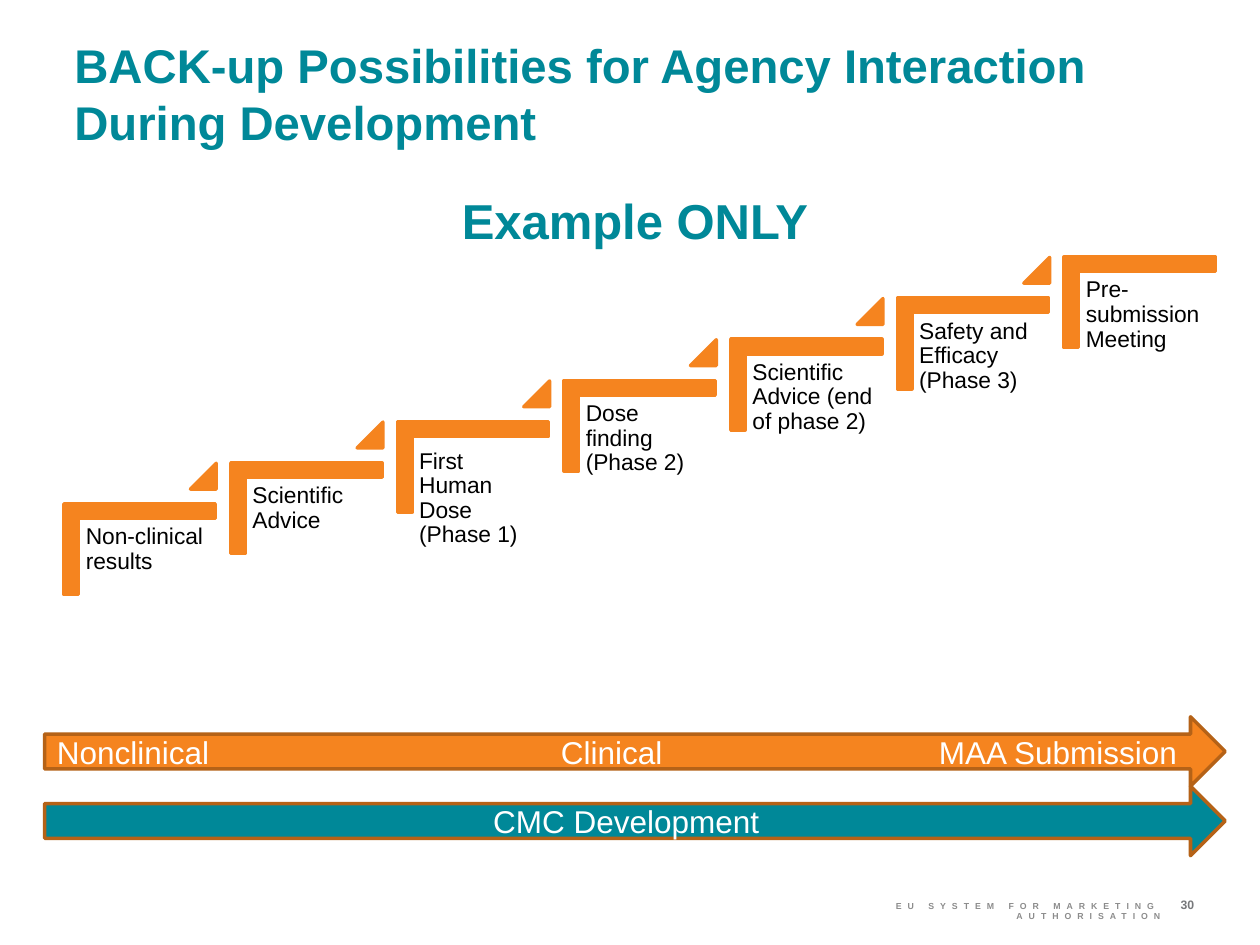
from lxml.etree import SubElement
from pptx import Presentation
from pptx.dml.color import RGBColor
from pptx.enum.shapes import MSO_SHAPE
from pptx.enum.text import MSO_ANCHOR, MSO_AUTO_SIZE, PP_ALIGN
from pptx.oxml.ns import qn
from pptx.util import Cm, Pt

ORANGE = RGBColor(0xF5, 0x84, 0x1F)
BROWN = RGBColor(0xB5, 0x62, 0x17)
TEAL = RGBColor(0x00, 0x88, 0x98)
BLACK = RGBColor(0x00, 0x00, 0x00)
WHITE = RGBColor(0xFF, 0xFF, 0xFF)
LIGHT_GREY = RGBColor(0x8C, 0x8C, 0x8C)
GREY = RGBColor(0x77, 0x78, 0x7B)

TITLE = "BACK-up Possibilities for Agency Interaction During Development"
SUBTITLE = "Example ONLY"
FOOTER = "EU SYSTEM FOR MARKETING AUTHORISATION"
PAGE_NUMBER = "30"
# Label of each step, with its shift down from the regular place in cm
STEPS = [
    ("Non-clinical results", 0),
    ("Scientific Advice", 0),
    ("First Human Dose (Phase 1)", 0.13),
    ("Dose finding (Phase 2)", 0),
    ("Scientific Advice (end of phase 2)", 0),
    ("Safety and Efficacy (Phase 3)", 0),
    ("Pre-submission Meeting", 0),
]
PHASES = ["Nonclinical", "Clinical", "MAA Submission"]
PHASE_TABS = [10.16, 17.78]
TRACKS = [
    ("\t".join(PHASES), ORANGE, PP_ALIGN.LEFT),
    ("CMC Development", TEAL, PP_ALIGN.CENTER),
]

STEP_RUN, STEP_RISE = 3.36, 0.83
TRACK_TOP, TRACK_HEIGHT = 14.45, 1.4


def write(shape, text, size, color, bold=False, align=PP_ALIGN.LEFT,
          anchor=MSO_ANCHOR.TOP, inset=0):
    """Put one formatted paragraph in the shape; inset None keeps the margins."""
    frame = shape.text_frame
    frame.word_wrap = True
    frame.auto_size = MSO_AUTO_SIZE.NONE
    frame.vertical_anchor = anchor
    if inset is not None:
        frame.margin_left = frame.margin_right = Cm(inset)
        frame.margin_top = frame.margin_bottom = Cm(inset)
    frame.text = text
    paragraph = frame.paragraphs[0]
    paragraph.alignment = align
    font = paragraph.font
    font.name, font.size, font.bold = "Arial", Pt(size), bold
    font.color.rgb = color
    return paragraph


def add_box(slide, left, top, width, height):
    return slide.shapes.add_textbox(Cm(left), Cm(top), Cm(width), Cm(height))


def add_outlined(slide, kind, left, top, width, height, fill, line):
    shape = slide.shapes.add_shape(kind, Cm(left), Cm(top), Cm(width), Cm(height))
    shape.shadow.inherit = False
    shape.fill.solid()
    shape.fill.fore_color.rgb = fill
    shape.line.color.rgb = line
    shape.line.width = Pt(2)
    return shape


def add_step(slide, index, label, shift):
    x, rise = index * STEP_RUN, index * STEP_RISE
    corner = add_outlined(slide, MSO_SHAPE.CORNER, 1.9 + x, 9.55 - rise,
                          1.83, 3.05, ORANGE, ORANGE)
    corner.rotation = 90
    corner.adjustments[0] = corner.adjustments[1] = 0.16
    box = add_box(slide, 1.6 + x, 10.46 - rise + shift, 2.74, 2.41)
    write(box, label, 13, BLACK, inset=0.13).line_spacing = 0.9
    if index < len(STEPS) - 1:
        triangle = add_outlined(slide, MSO_SHAPE.ISOSCELES_TRIANGLE, 3.84 + x,
                                9.34 - rise, 0.52, 0.52, ORANGE, ORANGE)
        triangle.adjustments[0] = 1


def add_tab_stops(paragraph, positions):
    tabs = SubElement(paragraph._p.get_or_add_pPr(), qn("a:tabLst"))
    paragraph._p.pPr.insert(0, tabs)
    for position in positions:
        SubElement(tabs, qn("a:tab"), pos=str(Cm(position)), algn="l")


def main():
    prs = Presentation()
    prs.slide_width, prs.slide_height = Cm(25.4), Cm(19.05)
    slide = prs.slides.add_slide(prs.slide_layouts[5])

    title = slide.shapes.title
    title.left, title.top = Cm(1.5), Cm(0.74)
    title.width, title.height = Cm(22.6), Cm(1.4)
    write(title, TITLE, 27, TEAL, bold=True)

    for index, (label, shift) in enumerate(STEPS):
        add_step(slide, index, label, shift)

    for index, (text, fill, align) in enumerate(TRACKS):
        arrow = add_outlined(slide, MSO_SHAPE.RIGHT_ARROW, 0.9,
                             TRACK_TOP + index * TRACK_HEIGHT,
                             23.8, TRACK_HEIGHT, fill, BROWN)
        track = write(arrow, text, 18, WHITE, align=align,
                      anchor=MSO_ANCHOR.MIDDLE, inset=None)
        if "\t" in text:
            add_tab_stops(track, PHASE_TABS)

    write(add_box(slide, 8.6, 3.63, 8.4, 1.6), SUBTITLE, 28, TEAL, bold=True,
          align=PP_ALIGN.CENTER, anchor=MSO_ANCHOR.MIDDLE, inset=None)
    footer = write(add_box(slide, 15.6, 18.16, 7.8, 0.4), FOOTER, 5, LIGHT_GREY,
                   bold=True, align=PP_ALIGN.RIGHT)
    footer.runs[0]._r.get_or_add_rPr().set("spc", "340")
    write(add_box(slide, 23.8, 18.08, 1.1, 0.43), PAGE_NUMBER, 7, GREY, bold=True)

    prs.save("out.pptx")


if __name__ == "__main__":
    main()
